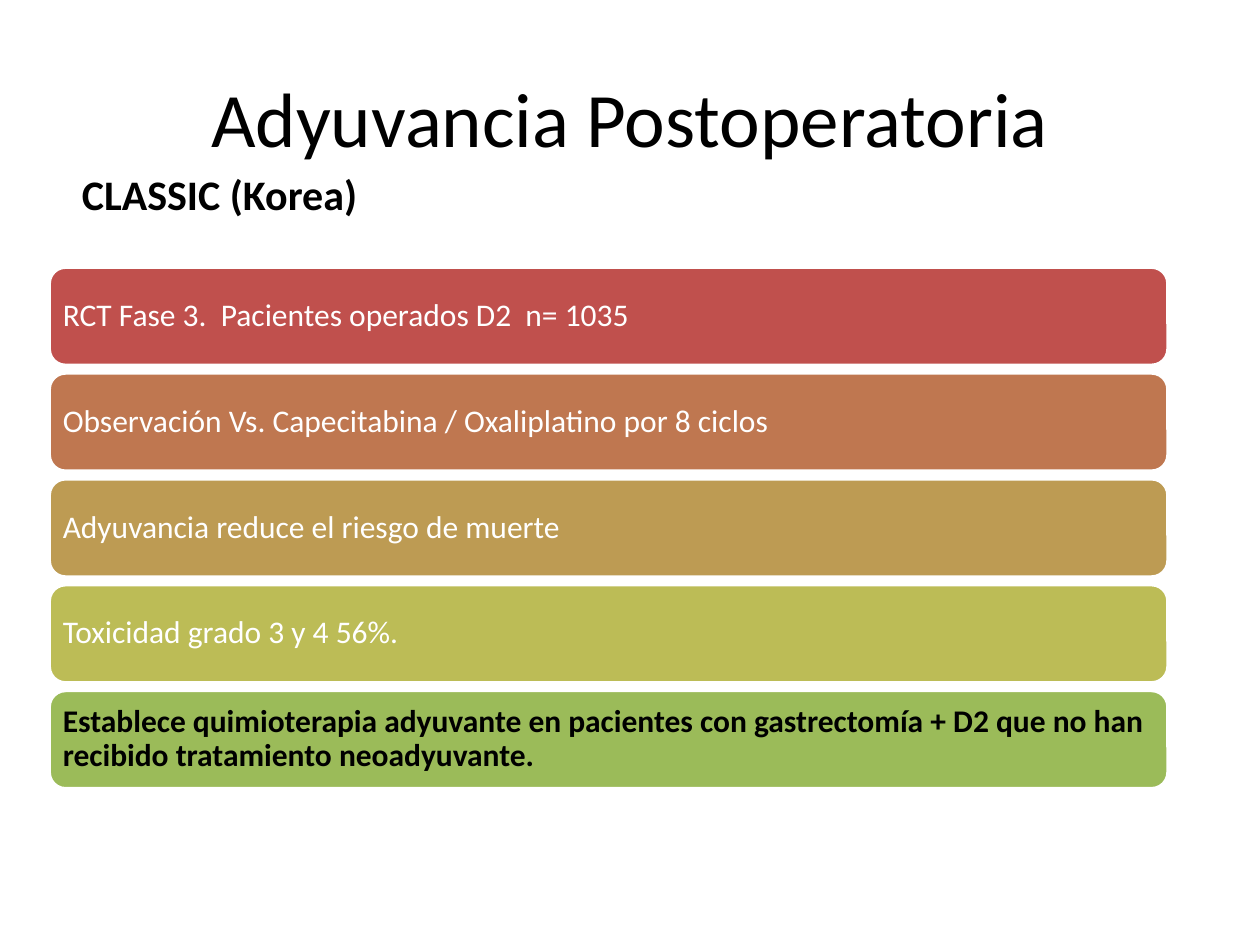
from dataclasses import dataclass

import pptx
import pptx.dml.color
import pptx.enum.shapes
import pptx.enum.text
import pptx.util


@dataclass(frozen=True)
class Theme:
    """Colours, font and type sizes of the slide."""
    font: str = "Calibri"
    dark: str = "000000"
    light: str = "FFFFFF"
    bars: tuple = ("C0504D", "BF7750", "BD9B53", "BCBC56", "9BBB59")
    title: int = 44
    heading: int = 24
    body: int = 18


THEME = Theme()
FINDINGS = (
    "RCT Fase 3.  Pacientes operados D2  n= 1035",
    "Observación Vs. Capecitabina / Oxaliplatino por 8 ciclos",
    "Adyuvancia reduce el riesgo de muerte",
    "Toxicidad grado 3 y 4 56%.",
)
CONCLUSION = (
    "Establece quimioterapia adyuvante en pacientes con gastrectomía + D2 "
    "que no han recibido tratamiento neoadyuvante."
)


def rgb(value):
    """Turn a hex string into a colour."""
    return pptx.dml.color.RGBColor.from_string(value)


def style(p, size, color, bold=False):
    """Set the font of a paragraph."""
    p.font.name = THEME.font
    p.font.size = pptx.util.Pt(size)
    p.font.color.rgb = rgb(color)
    p.font.bold = bold


def fill_placeholder(sp, box, text, size, anchor, bold=False):
    """Place a placeholder in its box and write its text."""
    sp.left, sp.top, sp.width, sp.height = map(pptx.util.Inches, box)
    sp.text_frame.text = text
    sp.text_frame.vertical_anchor = anchor
    p = sp.text_frame.paragraphs[0]
    style(p, size, THEME.dark, bold)
    return p


def add_bar(shapes, box, text, fill, color, bold):
    """Draw one rounded bar with its text."""
    sp = shapes.add_shape(
        pptx.enum.shapes.MSO_SHAPE.ROUNDED_RECTANGLE, *map(pptx.util.Inches, box))
    sp.shadow.inherit = False
    sp.fill.solid()
    sp.fill.fore_color.rgb = rgb(fill)
    sp.line.color.rgb = rgb(THEME.light)
    sp.line.width = pptx.util.Pt(2)
    tf = sp.text_frame
    tf.word_wrap = True
    tf.vertical_anchor = pptx.enum.text.MSO_ANCHOR.MIDDLE
    inset = pptx.util.Inches(0.07)
    tf.margin_left = tf.margin_top = tf.margin_right = tf.margin_bottom = inset
    tf.text = text
    p = tf.paragraphs[0]
    p.alignment = pptx.enum.text.PP_ALIGN.LEFT
    p.line_spacing = 0.9
    style(p, THEME.body, color, bold)


def add_bar_list(slide, box, gap):
    """Stack the findings and the conclusion as equal bars in the box."""
    left, top, width, height = box
    texts = (*FINDINGS, CONCLUSION)
    bar = (height - gap * (len(texts) - 1)) / len(texts)
    group = slide.shapes.add_group_shape()
    for i, (text, fill) in enumerate(zip(texts, THEME.bars)):
        last = text == CONCLUSION
        add_bar(group.shapes, (left, top + i * (bar + gap), width, bar), text,
                fill, THEME.dark if last else THEME.light, last)


def build_slide(prs):
    """Build the slide on the comparison layout."""
    slide = prs.slides.add_slide(prs.slide_layouts.get_by_name("Comparison"))
    anchors = pptx.enum.text.MSO_ANCHOR
    heading = slide.placeholders[1]
    fill_placeholder(heading, (0.55, 1.09, 4.42, 0.7), "CLASSIC (Korea)",
                     THEME.heading, anchors.BOTTOM, True)
    p = fill_placeholder(slide.shapes.title, (0.5, 0.3, 9, 1.25),
                         "Adyuvancia Postoperatoria", THEME.title, anchors.MIDDLE)
    p.alignment = pptx.enum.text.PP_ALIGN.CENTER
    for sp in list(slide.placeholders):
        if not sp.text_frame.text:
            sp.element.getparent().remove(sp.element)
    add_bar_list(slide, (0.39, 2.12, 8.88, 4.14), 0.06)


def main():
    """Create and save the presentation."""
    prs = pptx.Presentation()
    prs.slide_width = pptx.util.Inches(10)
    prs.slide_height = pptx.util.Inches(7.5)
    build_slide(prs)
    prs.save("out.pptx")


if __name__ == "__main__":
    main()
